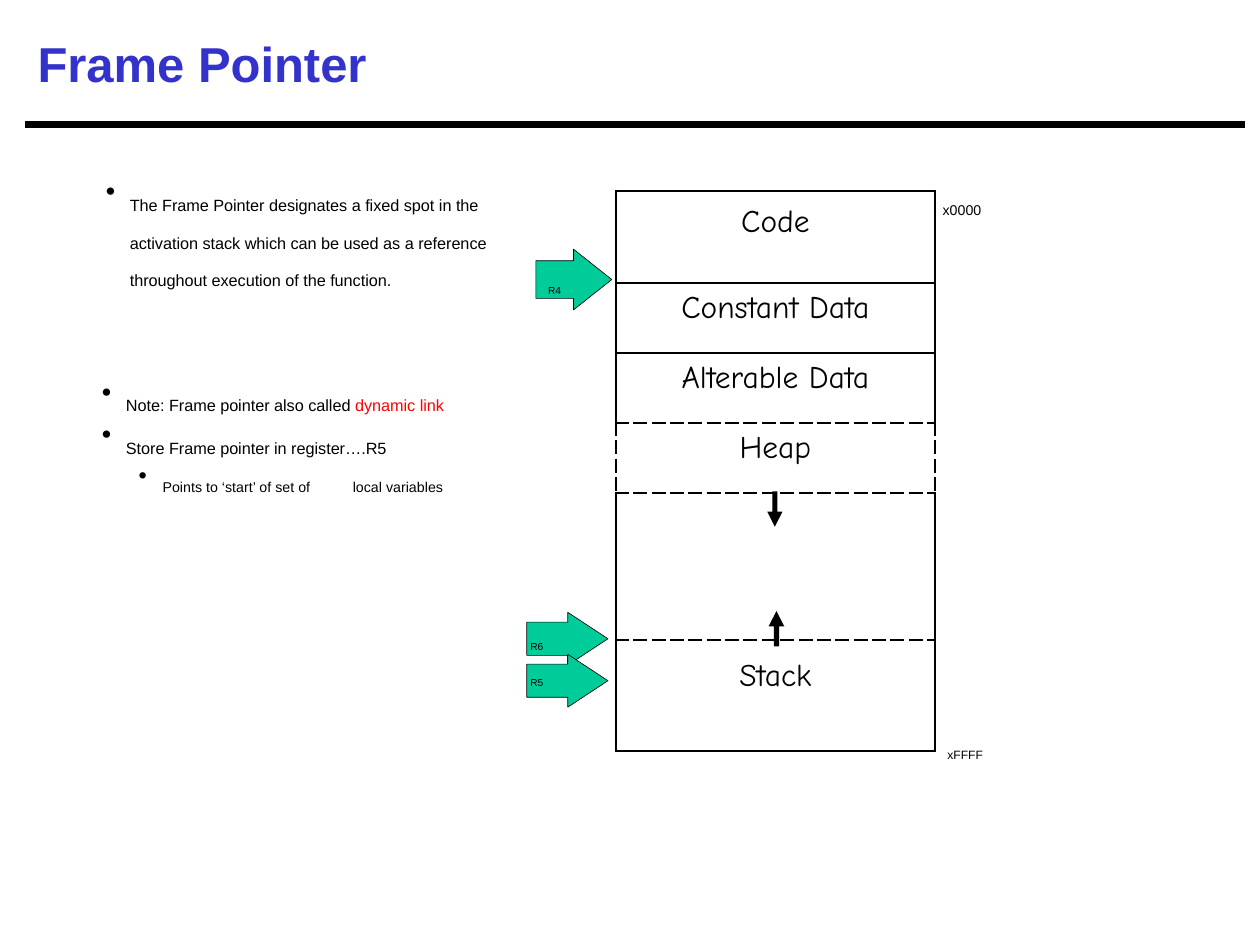
"""Build the Frame Pointer slide with its memory map."""
import pptx
import pptx.dml.color
import pptx.enum.shapes
import pptx.enum.text
import pptx.oxml.ns
import pptx.util
from lxml import etree

Pt = pptx.util.Pt
RGBColor = pptx.dml.color.RGBColor
SHAPE = pptx.enum.shapes.MSO_SHAPE
ALIGN = pptx.enum.text.PP_ALIGN
ANCHOR = pptx.enum.text.MSO_ANCHOR
qn = pptx.oxml.ns.qn

BLACK = RGBColor(0, 0, 0)
BLUE = RGBColor(0x33, 0x33, 0xCC)
RED = RGBColor(0xFF, 0, 0)
GREEN = RGBColor(0, 0xCC, 0x99)

DEFINITION = ("The Frame Pointer designates a fixed spot in the activation stack "
              "which can be used as a reference throughout execution of the function.")
BULLET = {"indent": (14.4, -13.7), "bullet": "•"}
SUBBULLET = {"indent": (35.3, -13.7), "bullet": "•"}

TEXT_BOXES = [
    ((59.8, 100.1, 232.6, 97.2), 0.7,
     [([(DEFINITION, BLACK)], dict(BULLET, size=16, before=1.1, spacing=0.99))]),
    ((57.6, 221, 232.6, 108.7), 2.2,
     [([("Note: Frame pointer also called ", BLACK), ("dynamic link", RED)],
       dict(BULLET, size=16, before=1.9, spacing=Pt(13.9))),
      ([("Store Frame pointer in register….R5", BLACK)],
       dict(BULLET, size=16, before=1.8, spacing=1.03)),
      ([("Points to ‘start’ of set of \tlocal variables", BLACK)],
       dict(SUBBULLET, size=14, before=2.8, level=1))]),
    ((313.2, 154.8, 30.2, 13), 0.7, [([("R4", BLACK)], dict(size=10, before=1))]),
    ((303.1, 358.6, 28.8, 32.4), 0.7,
     [([("R6", BLACK)], dict(size=10, before=1)),
      ([("R5", BLACK)], dict(size=10, before=6.7))]),
    ((538.6, 105.1, 57.6, 18), 0.7, [([("x0000", BLACK)], dict(size=14, before=1))]),
    ((541.4, 418.3, 41, 15.8), 0.7, [([("xFFFF", BLACK)], dict(size=12, before=1))]),
]

MAP_LEFT, MAP_TOP, MAP_WIDTH = 352, 109, 182.2
REGIONS = [
    ("Code", 52.8, 7.6, "solid"),
    ("Constant Data", 40, 3.8, "solid"),
    ("Alterable Data", 40, 3.8, "solid"),
    ("Heap", 40, 3.8, "sysDash"),
    ("", 84, 3.6, "solid"),
    ("Stack", 63.2, 10.6, "solid"),
]
EDGES = ["solid", "solid", "solid", "sysDash", "sysDash", "sysDash", "solid"]

ARROWS = [
    (SHAPE.DOWN_ARROW, (438.5, 280.8, 8.6, 20.2), 0.33, 1, BLACK),
    (SHAPE.UP_ARROW, (439.2, 349.2, 9, 20.2), 0.33, 0.97, BLACK),
    (SHAPE.RIGHT_ARROW, (306.2, 142.4, 43.4, 34.7), 0.62, 0.63, GREEN),
    (SHAPE.RIGHT_ARROW, (301, 349.9, 46.4, 30.2), 0.63, 0.76, GREEN),
    (SHAPE.RIGHT_ARROW, (301, 373.9, 46.4, 30.2), 0.63, 0.76, GREEN),
]


def write_text(paragraph, text, *, size, font="Arial", color=BLACK, bold=False, baseline=0):
    run = paragraph.add_run()
    run.text = text
    run.font.size = Pt(size)
    run.font.name = font
    run.font.bold = bold
    run.font.color.rgb = color
    if baseline:
        run.font._element.set("baseline", str(baseline * 1000))


def add_frame(slide, box, margins, anchor=ANCHOR.TOP):
    frame = slide.shapes.add_textbox(*map(Pt, box)).text_frame
    frame.word_wrap = True
    frame.vertical_anchor = anchor
    frame.margin_left, frame.margin_top, frame.margin_right, frame.margin_bottom = map(Pt, margins)
    return frame


def format_paragraph(paragraph, before, spacing=None, level=0, indent=None, bullet=None):
    paragraph.space_before = Pt(before)
    paragraph.level = level
    if spacing:
        paragraph.line_spacing = spacing
    if bullet:
        properties = paragraph._p.get_or_add_pPr()
        properties.set("marL", str(Pt(indent[0])))
        properties.set("indent", str(Pt(indent[1])))
        etree.SubElement(properties, qn("a:buChar"), char=bullet)
        tabs = etree.SubElement(properties, qn("a:tabLst"))
        etree.SubElement(tabs, qn("a:tab"), pos=str(Pt(indent[0])), algn="l")


def add_text_box(slide, box, top_margin, paragraphs):
    frame = add_frame(slide, box, (0, top_margin, 0, 0))
    for index, (runs, settings) in enumerate(paragraphs):
        paragraph = frame.add_paragraph() if index else frame.paragraphs[0]
        layout = dict(settings)
        size = layout.pop("size")
        format_paragraph(paragraph, **layout)
        for text, color in runs:
            write_text(paragraph, text, size=size, color=color, baseline=-25)


def add_border(cell, side, dash):
    line = etree.SubElement(cell._tc.get_or_add_tcPr(), qn("a:ln" + side), w=str(Pt(1.5)))
    fill = etree.SubElement(line, qn("a:solidFill"))
    etree.SubElement(fill, qn("a:srgbClr"), val=str(BLACK))
    etree.SubElement(line, qn("a:prstDash"), val=dash)


def add_memory_map(slide):
    height = sum(region[1] for region in REGIONS)
    box = map(Pt, (MAP_LEFT, MAP_TOP, MAP_WIDTH, height))
    table = slide.shapes.add_table(len(REGIONS), 1, *box).table
    table.first_row = table.horz_banding = False
    for index, (label, row_height, top_margin, side_dash) in enumerate(REGIONS):
        table.rows[index].height = Pt(row_height)
        cell = table.cell(index, 0)
        cell.margin_left = cell.margin_right = cell.margin_bottom = 0
        cell.margin_top = Pt(top_margin)
        dashes = (side_dash, side_dash, EDGES[index], EDGES[index + 1])
        for side, dash in zip("LRTB", dashes):
            add_border(cell, side, dash)
        cell.fill.background()
        if label:
            paragraph = cell.text_frame.paragraphs[0]
            paragraph.alignment = ALIGN.CENTER
            write_text(paragraph, label, size=18, font="Comic Neue")


def add_arrow(slide, kind, box, shaft, head, color):
    shape = slide.shapes.add_shape(kind, *map(Pt, box))
    shape.shadow.inherit = False
    shape.adjustments[0] = shaft
    shape.adjustments[1] = head
    shape.fill.solid()
    shape.fill.fore_color.rgb = color
    if color == BLACK:
        shape.line.fill.background()
    else:
        shape.line.color.rgb = BLACK
        shape.line.width = Pt(0.37)


def add_header(slide):
    rule = slide.shapes.add_connector(
        pptx.enum.shapes.MSO_CONNECTOR.STRAIGHT, Pt(14.4), Pt(71.3), Pt(711.4), Pt(71.3))
    rule.line.color.rgb = BLACK
    rule.line.width = Pt(3.75)
    etree.SubElement(rule._element.spPr, qn("a:effectLst"))
    frame = add_frame(slide, (14.4, 5.8, 696.2, 60.5), (7.2, 3.6, 7.2, 3.6), ANCHOR.MIDDLE)
    write_text(frame.paragraphs[0], "Frame Pointer", size=28, color=BLUE, bold=True)


def main():
    presentation = pptx.Presentation()
    presentation.slide_width, presentation.slide_height = Pt(720), Pt(540)
    slide = presentation.slides.add_slide(presentation.slide_layouts[6])
    add_header(slide)
    add_memory_map(slide)
    for arrow in ARROWS:
        add_arrow(slide, *arrow)
    for text_box in TEXT_BOXES:
        add_text_box(slide, *text_box)
    presentation.save("out.pptx")


if __name__ == "__main__":
    main()
